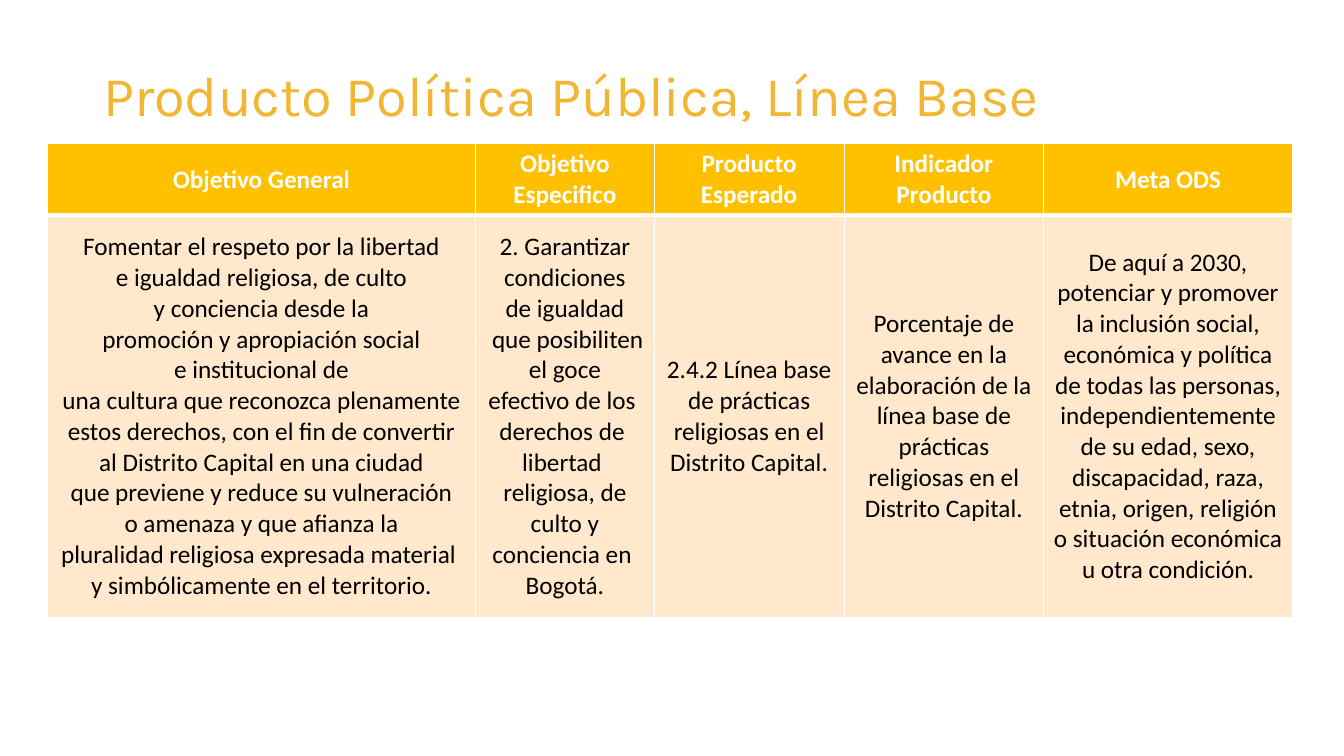
from lxml.etree import SubElement
from pptx import Presentation
from pptx.dml.color import RGBColor
from pptx.enum.text import MSO_ANCHOR, MSO_AUTO_SIZE, PP_ALIGN
from pptx.oxml.ns import qn
from pptx.util import Emu, Pt

PX = 9525
HUES = {"gold": "F1B633", "head": "FFC000", "body": "FFE8CC",
        "white": "FFFFFF", "black": "000000"}
NBSP = chr(160)

HEADS = ["Objetivo General", "Objetivo Especifico", "Producto Esperado",
         "Indicador Producto", "Meta ODS"]
CELLS = [
    "Fomentar el respeto~por la libertad e~igualdad religiosa, de~culto "
    "y~conciencia~desde la promoción~y~apropiación social e~institucional de "
    "una~cultura~que~reconozca~plenamente estos~derechos, con el "
    "fin~de~convertir al~Distrito Capital en~una ciudad que~previene y reduce "
    "su~vulneración o~amenaza y~que~afianza la "
    "pluralidad~religiosa~expresada~material~y~simbólicamente en "
    "el~territorio.",
    "2.~Garantizar\n~condiciones~\nde~igualdad\n~que~posibiliten~el~goce~\n"
    "efectivo~de~los~derechos~de~\nlibertad~\nreligiosa,~de\n~culto~y~\n"
    "conciencia~en~Bogotá.",
    "2.4.2 Línea base de prácticas religiosas en el Distrito Capital.",
    "Porcentaje de avance en la elaboración de la línea base de prácticas "
    "religiosas en el Distrito Capital.",
    "De aquí a 2030, potenciar y promover la inclusión social, económica y "
    "política de todas las personas, independientemente de su edad, sexo, "
    "discapacidad, raza, etnia, origen, religión o situación económica u otra "
    "condición.",
]
COLS = [408, 170, 181, 190, 237]
ROWS = [68, 383]


def write(frame, text, font="Calibri", size=18, hue="black", bold=False):
    frame.word_wrap = True
    frame.text = text.replace("~", NBSP)
    for para in frame.paragraphs:
        para.alignment = PP_ALIGN.CENTER
        for run in para.runs:
            run.font.name = font
            run.font.size = Pt(size)
            run.font.bold = bold
            run.font.color.rgb = RGBColor.from_string(HUES[hue])


class Deck:
    """Hold the style and the current slide."""

    def __init__(self, wide, high):
        self.show = Presentation()
        self.show.slide_width = Emu(wide * PX)
        self.show.slide_height = Emu(high * PX)
        self.slide = self.show.slides.add_slide(self.show.slide_layouts[5])

    def title(self, text, left, top, wide, high):
        box = self.slide.shapes.title
        box.left, box.top, box.width, box.height = (
            Emu(n * PX) for n in (left, top, wide, high))
        frame = box.text_frame
        write(frame, text, font="Karla", size=40, hue="gold")
        frame.vertical_anchor = MSO_ANCHOR.MIDDLE
        frame.auto_size = MSO_AUTO_SIZE.SHAPE_TO_FIT_TEXT

    def edges(self, cell, **widths):
        props = cell._tc.get_or_add_tcPr()
        for side in "LRTB":
            line = SubElement(props, qn("a:ln" + side),
                              w=str(Pt(widths.get(side, 1))))
            fill = SubElement(line, qn("a:solidFill"))
            SubElement(fill, qn("a:srgbClr"), val=HUES["white"])

    def cell(self, cell, text, fill, hue, bold, **widths):
        write(cell.text_frame, text, hue=hue, bold=bold)
        cell.vertical_anchor = MSO_ANCHOR.MIDDLE
        self.edges(cell, **widths)
        cell.fill.solid()
        cell.fill.fore_color.rgb = RGBColor.from_string(HUES[fill])

    def table(self, left, top, cols, rows):
        box = (left, top, sum(cols), sum(rows))
        grid = self.slide.shapes.add_table(
            len(rows), len(cols), *(Emu(n * PX) for n in box)).table
        grid.horz_banding = False
        for col, wide in zip(grid.columns, cols):
            col.width = Emu(wide * PX)
        for row, high in zip(grid.rows, rows):
            row.height = Emu(high * PX)
        for i, (head, text) in enumerate(zip(HEADS, CELLS)):
            self.cell(grid.cell(0, i), head, "head", "white", True, B=3)
            self.cell(grid.cell(1, i), text, "body", "black", False, T=3)


def main():
    deck = Deck(1280, 720)
    deck.title("Producto Política Pública, Línea Base", 72, 53, 943, 74)
    deck.table(45, 137, COLS, ROWS)
    deck.show.save("out.pptx")


if __name__ == "__main__":
    main()
